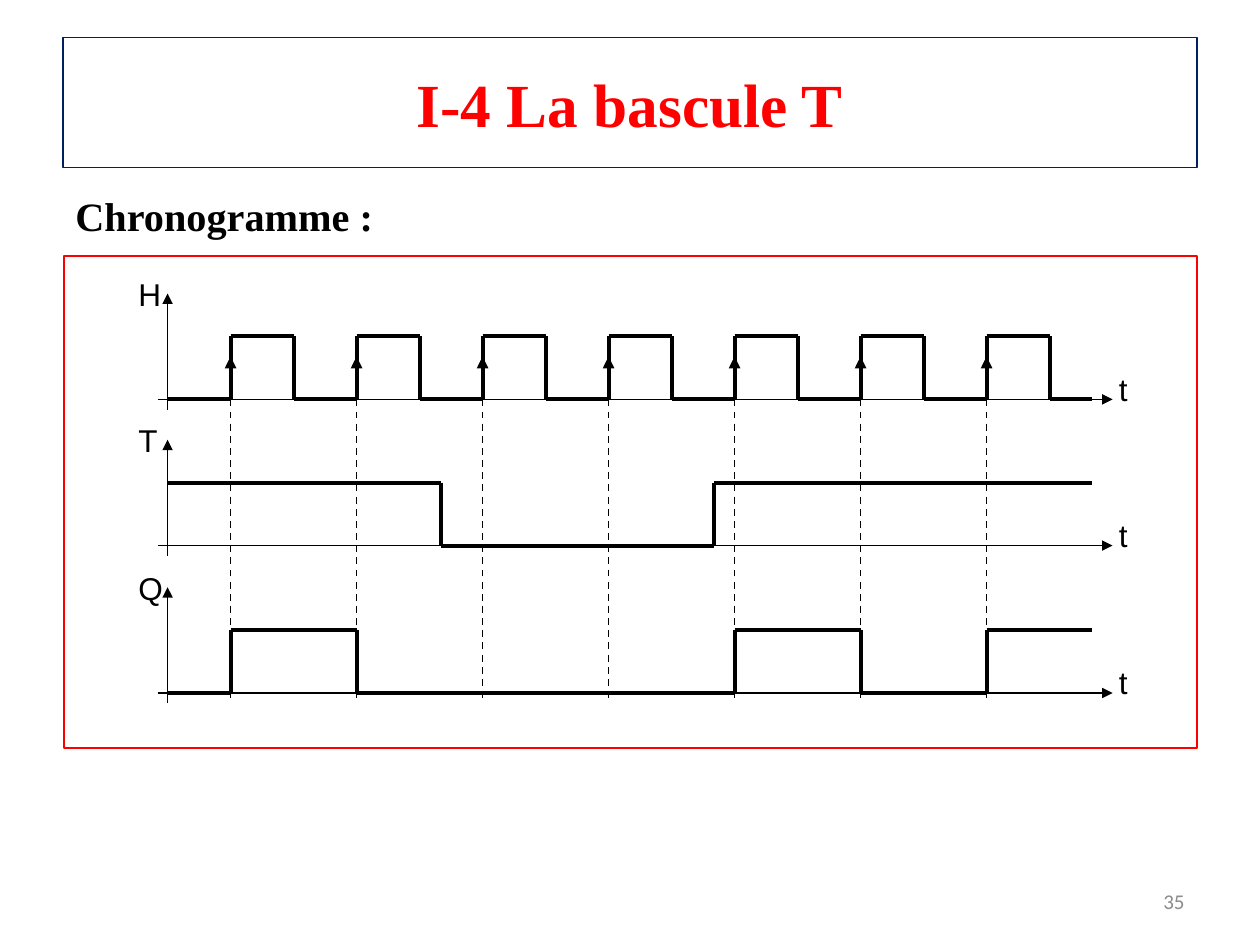
import itertools

import pptx
import pptx.dml.color
import pptx.enum.dml
import pptx.enum.shapes
import pptx.enum.text
import pptx.oxml
import pptx.util
from pptx.util import Inches

RGBColor = pptx.dml.color.RGBColor
ALIGN = pptx.enum.text.PP_ALIGN
BLACK = RGBColor(0x00, 0x00, 0x00)
RED = RGBColor(0xFF, 0x00, 0x00)
NAVY = RGBColor(0x00, 0x20, 0x60)
GRAY = RGBColor(0x8C, 0x8C, 0x8C)
THIN, THICK = pptx.util.Pt(1), pptx.util.Pt(2.25)

presentation = pptx.Presentation()
presentation.slide_width = Inches(10)
presentation.slide_height = Inches(7.5)
slide = presentation.slides.add_slide(presentation.slide_layouts[5])


def write(text, box=None, shape=None, size=18, font="Arial", color=BLACK,
          bold=False, align=ALIGN.CENTER, wrap=True):
    """Put text in the given shape, or in a new text box at box (inches)."""
    if shape is None:
        shape = slide.shapes.add_textbox(*map(Inches, box))
    frame = shape.text_frame
    frame.word_wrap = wrap
    frame.vertical_anchor = pptx.enum.text.MSO_ANCHOR.MIDDLE
    paragraph = frame.paragraphs[0]
    paragraph.text = text
    paragraph.alignment = align
    paragraph.font.name = font
    paragraph.font.size = pptx.util.Pt(size)
    paragraph.font.bold = bold
    paragraph.font.color.rgb = color


def draw_line(start, end, width=THIN, dashed=False, arrow=False):
    connector = slide.shapes.add_connector(
        pptx.enum.shapes.MSO_CONNECTOR.STRAIGHT, *map(Inches, start + end))
    connector.line.color.rgb = BLACK
    connector.line.width = width
    if dashed:
        connector.line.dash_style = pptx.enum.dml.MSO_LINE.DASH
    if arrow:
        pptx.oxml.ns  # namespace map used by qn below
        tail = connector.line._get_or_add_ln().makeelement(
            pptx.oxml.ns.qn("a:tailEnd"), {"type": "triangle"})
        connector.line._get_or_add_ln().append(tail)
    properties = connector._element.spPr
    properties.append(properties.makeelement(pptx.oxml.ns.qn("a:effectLst"), {}))


# Title and heading
title = slide.shapes.title
title.left, title.top = Inches(0.5), Inches(0.3)
title.width, title.height = Inches(9), Inches(1.03)
title.line.color.rgb = NAVY
title.line.width = pptx.util.Pt(0.75)
write("I-4 La bascule T", shape=title, size=35, font="Times New Roman",
      color=RED, bold=True)
write("Chronogramme :", (0.5, 1.42, 9, 0.58), size=23, font="Times New Roman",
      bold=True, align=ALIGN.LEFT)

# Frame around the timing diagram
diagram_frame = slide.shapes.add_shape(
    pptx.enum.shapes.MSO_SHAPE.RECTANGLE,
    Inches(0.51), Inches(2.03), Inches(8.99), Inches(3.91))
diagram_frame.shadow.inherit = False
diagram_frame.fill.background()
diagram_frame.line.color.rgb = RED
diagram_frame.line.width = THIN

# Timing diagram: time in inches from the origin, signal level 0 or 1
ORIGIN, END, AMPLITUDE = 1.33, 7.34, 0.5
BASELINES = {"H": 3.17, "T": 4.33, "Q": 5.5}
rising_edges = [0.5 + period for period in range(7)]

clock = [(0, 0)]
for edge in rising_edges:
    clock += [(edge, 0), (edge, 1), (edge + 0.5, 1), (edge + 0.5, 0)]
clock.append((END, 0))
signals = {
    "H": clock,
    "T": [(0, 1), (2.17, 1), (2.17, 0), (4.34, 0), (4.34, 1), (END, 1)],
    "Q": [(0, 0), (0.5, 0), (0.5, 1), (1.5, 1), (1.5, 0), (2.5, 0), (3.5, 0),
          (4.5, 0), (4.5, 1), (5.5, 1), (5.5, 0), (6.5, 0), (6.5, 1), (END, 1)],
}

for edge in rising_edges:
    x = ORIGIN + edge
    draw_line((x, BASELINES["H"]), (x, BASELINES["Q"] + 0.08), dashed=True)
    draw_line((x, BASELINES["H"]), (x, BASELINES["H"] - 0.34), THICK, arrow=True)

for name, baseline in BASELINES.items():
    draw_line((ORIGIN, baseline + 0.08), (ORIGIN, baseline - 0.84), arrow=True)
    draw_line((ORIGIN - 0.08, baseline), (8.83, baseline), arrow=True)
    write("t", (8.75, baseline - 0.25, 0.33, 0.33), wrap=False)
    write(name, (1, baseline - 1, 0.33, 0.33), wrap=False)
    points = [(ORIGIN + time, baseline - level * AMPLITUDE)
              for time, level in signals[name]]
    for start, end in itertools.pairwise(points):
        draw_line(start, end, THICK)

# Page number
write("35", (7.17, 6.95, 2.33, 0.4), size=12, font="Calibri", color=GRAY,
      align=ALIGN.RIGHT)

presentation.save("out.pptx")
